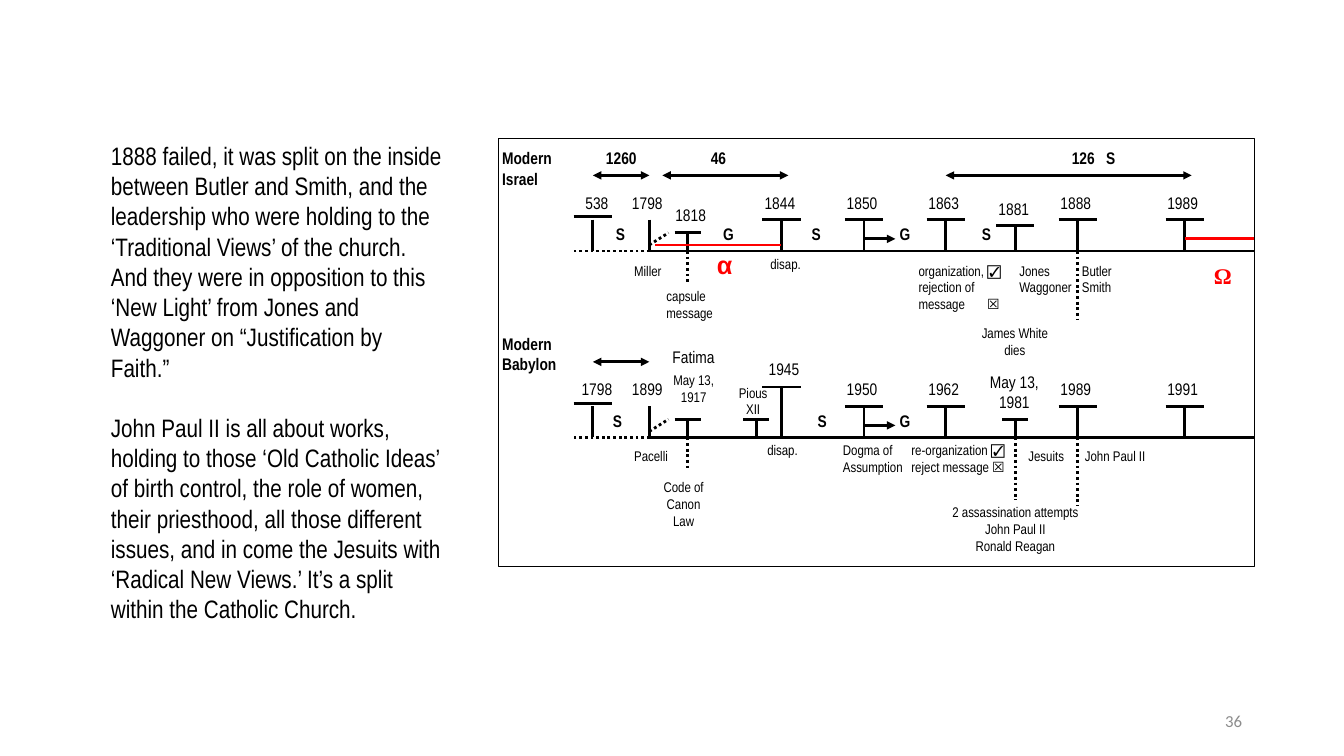
"""Draw the two parallel time lines beside their notes."""
from dataclasses import dataclass

from lxml import etree
from pptx import Presentation
from pptx.dml.color import RGBColor
from pptx.enum.dml import MSO_LINE
from pptx.enum.shapes import MSO_CONNECTOR, MSO_SHAPE
from pptx.enum.text import MSO_ANCHOR, MSO_AUTO_SIZE, PP_ALIGN
from pptx.oxml.ns import qn
from pptx.util import Inches, Pt

STRAIGHT = MSO_CONNECTOR.STRAIGHT
RECT = MSO_SHAPE.RECTANGLE
DOT = MSO_LINE.ROUND_DOT
MIDDLE = MSO_ANCHOR.MIDDLE
FIXED = MSO_AUTO_SIZE.NONE
LEFT, MID, RIGHT = PP_ALIGN.LEFT, PP_ALIGN.CENTER, PP_ALIGN.RIGHT

COLORS = {"ink": "000000", "red": "FF0000", "gray": "8C8C8C"}
FORMATS = {
    "note": {"name": "Arial Narrow", "size": Pt(10)},
    "year": {"name": "Arial Narrow", "size": Pt(12)},
    "bold": {"name": "Arial Narrow", "size": Pt(12), "bold": True},
    "body": {"name": "Arial Narrow", "size": Pt(18)},
    "alpha": {"name": "Arial", "size": Pt(18), "bold": True},
    "omega": {"name": "Times New Roman", "size": Pt(16), "bold": True},
    "page": {"name": "Calibri", "size": Pt(12)},
}
MARGINS = ("margin_left", "margin_top", "margin_right", "margin_bottom")
END = 12.44
NOTES = (
    "1888 failed, it was split on the inside between Butler and Smith, and the "
    "leadership who were holding to the ‘Traditional Views’ of the church. And they "
    "were in opposition to this ‘New Light’ from Jones and Waggoner on “Justification "
    "by Faith.”",
    "John Paul II is all about works, holding to those ‘Old Catholic Ideas’ of birth "
    "control, the role of women, their priesthood, all those different issues, and in "
    "come the Jesuits with ‘Radical New Views.’ It’s a split within the Catholic Church.",
)


@dataclass(frozen=True)
class Label:
    """Hold one text and its place; a bar parts the runs of a line."""
    text: str
    x: float
    y: float
    w: float
    h: float
    form: str = "note"
    align: PP_ALIGN = LEFT
    color: str = "ink"


@dataclass(frozen=True)
class Line:
    """Hold one line and its style."""
    x1: float
    y1: float
    x2: float
    y2: float
    color: str = "ink"
    dots: bool = False
    ends: tuple = ()


@dataclass(frozen=True)
class Peg:
    """Hold an upright with a crossbar."""
    x: float
    rise: float = 0.31
    half: float = 0.19


@dataclass(frozen=True)
class Track:
    """Hold what sets one time line apart."""
    base: float
    years: tuple
    signs: tuple
    pegs: tuple


TRACKS = (
    Track(2.49, ("538", "1798", "1850", "1863", "1888", "1989"),
          (("S", 6), ("G", 7.07), ("S", 7.94), ("G", 8.82), ("S", 9.63)),
          (Peg(7.75), Peg(10.07, 0.25))),
    Track(4.34, ("1798", "1899", "1950", "1962", "1989", "1991"),
          (("S", 5.97), ("S", 8), ("G", 8.82)),
          (Peg(7.75, 0.5), Peg(7.5, 0.18, 0.13), Peg(10.07, 0.18, 0.13))),
)
YEARS = (5.69, 6.19, 8.32, 9.13, 10.44, 11.5)
PEGS = (Peg(6.82, 0.18, 0.13), Peg(8.57), Peg(9.38), Peg(10.69), Peg(11.75))
BOTH = ("head", "tail")

LINES = (
    Line(6.57, 1.74, 7.82, 1.74, ends=BOTH),
    Line(9.38, 1.74, 11.82, 1.74, ends=BOTH),
    Line(10.07, 4.34, 10.07, 4.96, dots=True),
    Line(6.5, 2.43, 7.75, 2.43, "red"),
    Line(11.75, 2.37, END, 2.37, "red"),
)
LABELS = (
    Label("Modern\nIsrael", 4.94, 1.43, 0.64, 0.47, "bold"),
    Label("Modern\nBabylon", 4.94, 3.27, 0.64, 0.47, "bold"),
    Label("1260", 5.97, 1.43, 0.5, 0.31, "bold"),
    Label("46", 7.01, 1.43, 0.4, 0.31, "bold"),
    Label("126", 10.59, 1.43, 0.4, 0.31, "bold"),
    Label("S", 10.93, 1.43, 0.3, 0.31, "bold"),
    Label("1818", 6.63, 1.99, 0.44, 0.28, "year", MID),
    Label("1844", 7.5, 1.87, 0.47, 0.28, "year", MID),
    Label("1881", 9.82, 1.93, 0.47, 0.28, "year", MID),
    Label("Miller", 6.25, 2.56, 0.44, 0.25),
    Label("capsule message", 6.57, 2.81, 0.56, 0.5),
    Label("disap.", 7.6, 2.49, 0.59, 0.31),
    Label("α", 7.07, 2.43, 0.31, 0.41, "alpha", color="red"),
    Label("Ω", 12, 2.56, 0.31, 0.38, "omega", color="red"),
    Label("organization, |☑\nrejection of message", 9.07, 2.56, 0.94, 0.62),
    Label("☒", 9.75, 2.89, 0.25, 0.25),
    Label("Jones\nWaggoner", 10.07, 2.56, 0.62, 0.62),
    Label("Butler\nSmith", 10.69, 2.56, 0.62, 0.62),
    Label("James White\ndies", 9.69, 3.18, 0.75, 0.44, align=MID),
    Label("Fatima", 6.63, 3.4, 0.5, 0.25, "year"),
    Label("May 13,\n1917", 6.63, 3.65, 0.5, 0.47, align=MID),
    Label("Pious XII", 7.25, 3.77, 0.44, 0.44, align=MID),
    Label("1945", 7.57, 3.52, 0.41, 0.28, "year", MID),
    Label("May 13,\n1981", 9.75, 3.65, 0.62, 0.47, "year", MID),
    Label("Pacelli", 6.25, 4.4, 0.44, 0.31),
    Label("Code of Canon Law", 6.5, 4.71, 0.56, 0.56, align=MID),
    Label("disap.", 7.57, 4.34, 0.44, 0.31),
    Label("Dogma of Assumption", 8.32, 4.34, 0.69, 0.5),
    Label("re-organization |☑\nreject message |☒", 9, 4.34, 1.12, 0.44),
    Label("Jesuits", 10.16, 4.4, 0.56, 0.56),
    Label("John Paul II", 10.72, 4.4, 0.69, 0.56),
    Label("2 assassination attempts\nJohn Paul II\nRonald Reagan",
          9.38, 4.96, 1.38, 0.56, align=MID),
)


def style(font, form: str, color: str = "ink") -> None:
    """Apply a named format to a font."""
    for key, value in FORMATS[form].items():
        setattr(font, key, value)
    font.color.rgb = RGBColor.from_string(COLORS[color])


def draw_line(slide, line: Line) -> None:
    """Draw a line with its dots and heads."""
    spots = (Inches(v) for v in (line.x1, line.y1, line.x2, line.y2))
    wire = slide.shapes.add_connector(STRAIGHT, *spots)
    wire.line.color.rgb = RGBColor.from_string(COLORS[line.color])
    wire.line.width = Pt(2)
    if line.dots:
        wire.line.dash_style = DOT
    props = wire.element.spPr
    for end in line.ends:
        etree.SubElement(props.find(qn("a:ln")), qn(f"a:{end}End"), type="triangle")
    etree.SubElement(props, qn("a:effectLst"))


def draw_label(slide, label: Label):
    """Draw a text and return its frame."""
    place = (Inches(v) for v in (label.x, label.y, label.w, label.h))
    frame = slide.shapes.add_textbox(*place).text_frame
    frame.word_wrap = True
    for side in MARGINS:
        setattr(frame, side, Inches(0.04))
    for i, row in enumerate(label.text.split("\n")):
        para = frame.add_paragraph() if i else frame.paragraphs[0]
        para.alignment = label.align
        for piece in row.split("|"):
            run = para.add_run()
            run.text = piece
            style(run.font, label.form, label.color)
            if piece in ("☑", "☒"):
                run.font.name = "Arial"
    return frame


def draw_track(slide, track: Track) -> None:
    """Draw one time line with its pegs, years and signs."""
    base = track.base
    lines = [
        Line(6.44, base, END, base),
        Line(6.5, base, 5.69, base, dots=True),
        Line(5.69, base - 0.34, 6.07, base - 0.34),
        Line(5.88, base - 0.75, 6.44, base - 0.75, ends=BOTH),
        Line(6.44, base - 0.06, 6.63, base - 0.18, dots=True),
        Line(8.57, base - 0.12, 8.88, base - 0.12, ends=("tail",)),
        Line(6.82, base, 6.82, base + 0.31, dots=True),
        Line(10.69, base, 10.69, base + 0.68, dots=True),
    ]
    lines += [Line(x, base - 0.31, x, base) for x in (5.88, 6.44)]
    for peg in PEGS + track.pegs:
        top = base - peg.rise
        lines += [Line(peg.x, top, peg.x, base),
                  Line(peg.x - peg.half, top, peg.x + peg.half, top)]
    for line in lines:
        draw_line(slide, line)
    for text, x in zip(track.years, YEARS):
        draw_label(slide, Label(text, x, base - 0.62, 0.46, 0.28, "year", MID))
    for text, x in track.signs:
        draw_label(slide, Label(text, x, base - 0.31, 0.31, 0.31, "bold", MID))


def fill_notes(slide) -> None:
    """Place the notes in the body and drop the empty title."""
    title, body = slide.placeholders
    title.element.getparent().remove(title.element)
    place = {"left": 1, "top": 1.34, "width": 3.53, "height": 4.95}
    for key, value in place.items():
        setattr(body, key, Inches(value))
    frame = body.text_frame
    frame.auto_size = FIXED
    frame.text = "\n".join(NOTES)
    for para, gap in zip(frame.paragraphs, (0, 21.6)):
        para.space_before = Pt(gap)
        props = para._p.get_or_add_pPr()
        props.set("marL", "0")
        props.set("indent", "0")
        etree.SubElement(props, qn("a:buNone"))
        style(para.runs[0].font, "body")


def main() -> None:
    """Build and save the slide."""
    deck = Presentation()
    deck.slide_width, deck.slide_height = Inches(13.33), Inches(7.5)
    slide = deck.slides.add_slide(deck.slide_layouts[1])
    fill_notes(slide)
    place = (Inches(v) for v in (4.94, 1.37, 7.5, 4.25))
    panel = slide.shapes.add_shape(RECT, *place)
    panel.shadow.inherit = False
    panel.fill.background()
    panel.line.color.rgb = RGBColor.from_string(COLORS["ink"])
    panel.line.width = Pt(0.25)
    for track in TRACKS:
        draw_track(slide, track)
    for line in LINES:
        draw_line(slide, line)
    for label in LABELS:
        draw_label(slide, label)
    page = Label("36", 9.42, 6.95, 2.94, 0.4, "page", RIGHT, "gray")
    draw_label(slide, page).vertical_anchor = MIDDLE
    deck.save("out.pptx")


if __name__ == "__main__":
    main()
